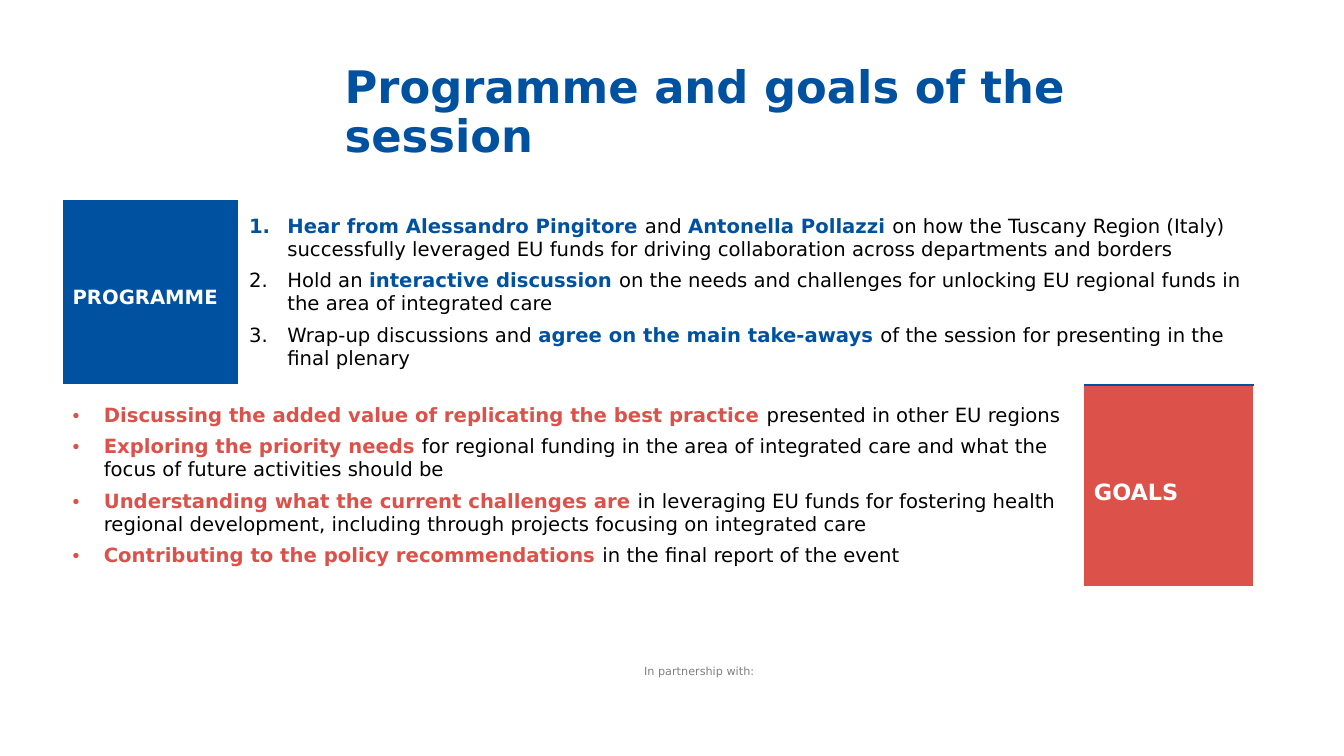
from lxml.etree import SubElement
from pptx import Presentation
from pptx.dml.color import RGBColor
from pptx.enum.text import MSO_ANCHOR
from pptx.oxml.ns import qn
from pptx.util import Inches, Pt

BLUE = RGBColor(0x00, 0x52, 0xA1)
RED = RGBColor(0xDC, 0x51, 0x49)
WHITE = RGBColor(0xFF, 0xFF, 0xFF)
BLACK = RGBColor(0x00, 0x00, 0x00)
GREY = RGBColor(0x80, 0x80, 0x80)
FONT = "DejaVu Sans"
COLUMN_WIDTHS = (1.75, 8.38, 1.68)
ROW_HEIGHTS = (1.84, 2)

PROGRAMME = [
    [("Hear from Alessandro Pingitore ", True), ("and ", False), ("Antonella Pollazzi ", True),
     ("on how the Tuscany Region (Italy) successfully leveraged EU funds for driving "
      "collaboration across departments and borders", False)],
    [("Hold an ", False), ("interactive discussion ", True),
     ("on the needs and challenges for unlocking EU regional funds in the area of "
      "integrated care", False)],
    [("Wrap-up discussions and ", False), ("agree on the main take-aways ", True),
     ("of the session for presenting in the final plenary", False)],
]
GOALS = [
    [("Discussing the added value of replicating the best practice ", True),
     ("presented in other EU regions", False)],
    [("Exploring the priority needs ", True),
     ("for regional funding in the area of integrated care and what the focus of future "
      "activities should be", False)],
    [("Understanding what the current challenges are ", True),
     ("in leveraging EU funds for fostering health regional development, including through "
      "projects focusing on integrated care", False)],
    [("Contributing to the policy recommendations ", True),
     ("in the final report of the event", False)],
]


def style_font(font, size, color, bold=False):
    font.name = FONT
    font.size = Pt(size)
    font.bold = bold
    font.color.rgb = color


def add_text(page, text, left, top, width, height, size, color, bold=False, wrap=True):
    box = page.shapes.add_textbox(Inches(left), Inches(top), Inches(width), Inches(height))
    frame = box.text_frame
    frame.word_wrap = wrap
    frame.text = text
    para = frame.paragraphs[0]
    style_font(para.runs[0].font, size, color, bold)
    return frame


def set_borders(cell, top=WHITE, bottom=WHITE):
    properties = cell._tc.get_or_add_tcPr()
    for side, color in (("L", WHITE), ("R", WHITE), ("T", top), ("B", bottom)):
        line = SubElement(properties, qn(f"a:ln{side}"), w=str(Pt(1)))
        fill = SubElement(line, qn("a:solidFill"))
        SubElement(fill, qn("a:srgbClr"), val=str(color))


def fill_cell(cell, color):
    cell.fill.solid()
    cell.fill.fore_color.rgb = color


def fill_label(cell, text, size, color):
    fill_cell(cell, color)
    cell.text = text
    para = cell.text_frame.paragraphs[0]
    para.line_spacing = 1.5
    style_font(para.runs[0].font, size, WHITE, True)
    return para


def set_bullet(para, indent, tag, **attributes):
    properties = para._p.get_or_add_pPr()
    properties.set("marL", str(Inches(indent)))
    properties.set("indent", str(-Inches(indent)))
    SubElement(properties, qn("a:buFont"), typeface="Arial" if tag == "a:buChar" else "+mj-lt")
    SubElement(properties, qn(tag), **attributes)


def fill_list(cell, items, accent, indent, tag, **attributes):
    frame = cell.text_frame
    for index, item in enumerate(items):
        para = frame.add_paragraph() if index else frame.paragraphs[0]
        para.space_after = Pt(6)
        set_bullet(para, indent, tag, **attributes)
        for text, strong in item:
            span = para.add_run()
            span.text = text
            style_font(span.font, 14, accent if strong else BLACK, strong)


def add_agenda(page):
    frame = page.shapes.add_table(2, 3, Inches(0.62), Inches(1.98),
                                  Inches(sum(COLUMN_WIDTHS)), Inches(sum(ROW_HEIGHTS)))
    table = frame.table
    table.first_row = False
    table.horz_banding = False
    for column, width in zip(table.columns, COLUMN_WIDTHS):
        column.width = Inches(width)
    for row, height in zip(table.rows, ROW_HEIGHTS):
        row.height = Inches(height)

    programme_label, programme_list = table.cell(0, 0), table.cell(0, 1)
    goals_list, goals_label = table.cell(1, 0), table.cell(1, 2)
    programme_list.merge(table.cell(0, 2))
    goals_list.merge(table.cell(1, 1))
    set_borders(programme_label)
    set_borders(programme_list, bottom=BLUE)
    set_borders(table.cell(0, 2), bottom=BLUE)
    set_borders(goals_list)
    set_borders(table.cell(1, 1))
    set_borders(goals_label, top=BLUE)
    for cell in table.iter_cells():
        cell.vertical_anchor = MSO_ANCHOR.MIDDLE

    fill_label(programme_label, "PROGRAMME", 14, BLUE)
    programme_list.fill.background()
    fill_list(programme_list, PROGRAMME, BLUE, 0.38, "a:buAutoNum", type="arabicPeriod")
    fill_cell(goals_list, WHITE)
    fill_list(goals_list, GOALS, RED, 0.31, "a:buChar", char="•")
    fill_label(goals_label, "GOALS", 16, RED).space_after = Pt(6)


def main():
    deck = Presentation()
    deck.slide_width = Inches(13.33)
    deck.slide_height = Inches(7.5)
    page = deck.slides.add_slide(deck.slide_layouts[6])
    add_text(page, "In partnership with:", 6.29, 6.54, 1.34, 0.24, 8, GREY, wrap=False)
    title = add_text(page, "Programme and goals of the session",
                     3.32, 0.4, 9.09, 1.45, 32, BLUE, True)
    title.vertical_anchor = MSO_ANCHOR.MIDDLE
    title.paragraphs[0].line_spacing = 0.9
    add_agenda(page)
    deck.save("out.pptx")


if __name__ == "__main__":
    main()
